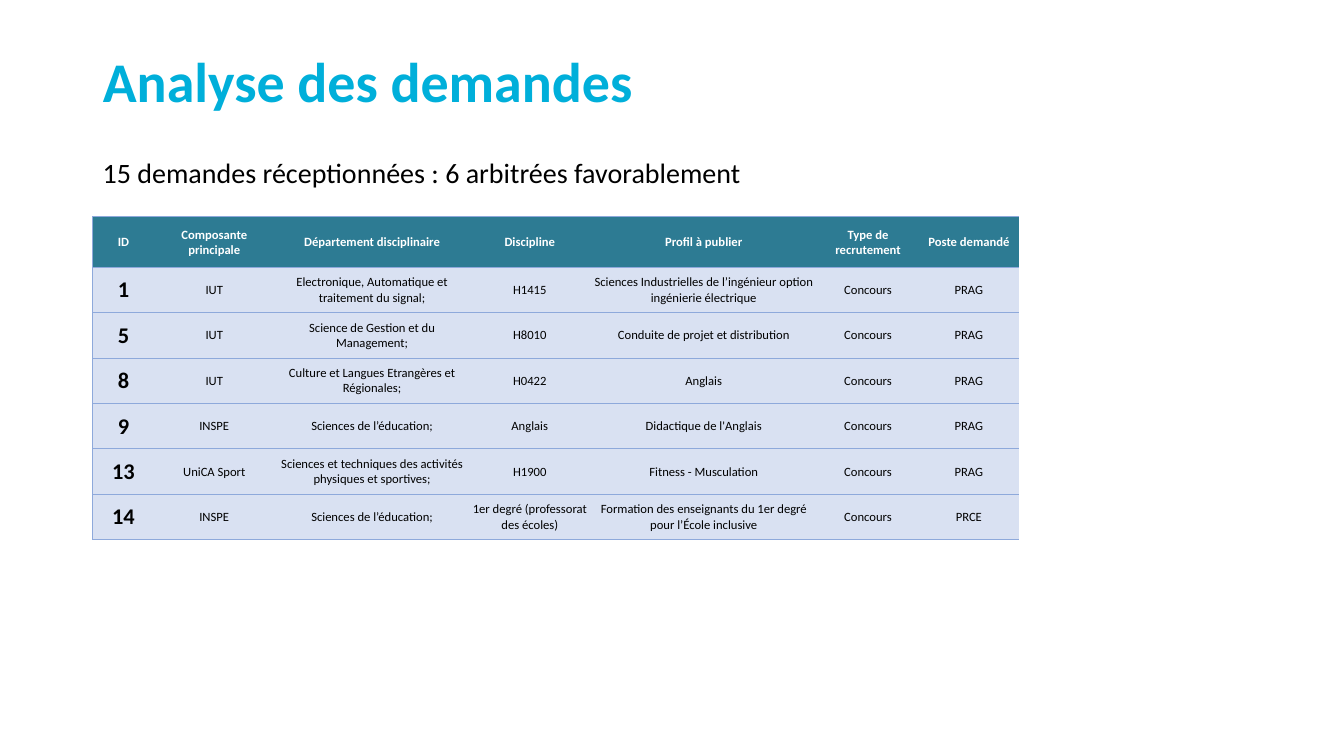
from dataclasses import dataclass

from lxml.etree import SubElement
from pptx import Presentation
from pptx.dml.color import RGBColor as RGB
from pptx.enum.text import MSO_ANCHOR as ANCHOR, PP_ALIGN as ALIGN
from pptx.oxml.ns import qn
from pptx.util import Pt

PX = 9144  # EMU per px, 100 px to the inch


@dataclass(frozen=True)
class Theme:
    font: str = "Calibri"
    title: str = "00AFDA"
    text: str = "000000"
    header_text: str = "FFFFFF"
    header_fill: str = "2D7B93"
    row_fill: str = "D9E1F2"
    border: str = "8EA9DB"
    title_size: int = 40
    body_size: int = 20
    id_size: int = 16
    cell_size: int = 9


THEME = Theme()

COLUMN_WIDTHS = [61, 119, 194, 119, 226, 100, 100]
HEADER_HEIGHT, ROW_HEIGHT = 50, 45
HEADER = ["ID", "Composante principale", "Département disciplinaire", "Discipline",
          "Profil à publier", "Type de recrutement", "Poste demandé"]
REQUESTS = [
    ["1", "IUT", "Electronique, Automatique et traitement du signal;", "H1415",
     "Sciences Industrielles de l’ingénieur option ingénierie électrique", "Concours", "PRAG"],
    ["5", "IUT", "Science de Gestion et du Management;", "H8010",
     "Conduite de projet et distribution", "Concours", "PRAG"],
    ["8", "IUT", "Culture et Langues Etrangères et Régionales;", "H0422",
     "Anglais", "Concours", "PRAG"],
    ["9", "INSPE", "Sciences de l’éducation;", "Anglais",
     "Didactique de l'Anglais", "Concours", "PRAG"],
    ["13", "UniCA Sport", "Sciences et techniques des activités physiques et sportives;", "H1900",
     "Fitness - Musculation", "Concours", "PRAG"],
    ["14", "INSPE", "Sciences de l’éducation;", "1er degré (professorat des écoles)",
     "Formation des enseignants du 1er degré pour l’École inclusive", "Concours", "PRCE"],
]


def write(tf, text, *, size, color, bold=False, align=ALIGN.LEFT, spacing=1.0):
    p = tf.paragraphs[0]
    p.alignment, p.line_spacing = align, spacing
    r = p.add_run()
    r.text = text
    r.font.name, r.font.size, r.font.bold = THEME.font, Pt(size), bold
    r.font.color.rgb = RGB.from_string(color)


def set_borders(cell, visible):
    """Draw the sides named in visible (from L, R, T, B) and blank the others."""
    tcPr = cell._tc.get_or_add_tcPr()
    for side in "LRTB":
        ln = SubElement(tcPr, qn(f"a:ln{side}"), w=str(Pt(0.5)))
        if side in visible:
            fill = SubElement(ln, qn("a:solidFill"))
            SubElement(fill, qn("a:srgbClr"), val=THEME.border)
        else:
            SubElement(ln, qn("a:noFill"))


class SlideBuilder:
    def __init__(self, prs, theme):
        self.theme = theme
        self.slide = prs.slides.add_slide(prs.slide_layouts[5])

    def title(self, text, x, y, w, h):
        sp = self.slide.shapes.title
        sp.left, sp.top, sp.width, sp.height = (v * PX for v in (x, y, w, h))
        tf = sp.text_frame
        tf.vertical_anchor, tf.word_wrap = ANCHOR.MIDDLE, True
        write(tf, text, size=self.theme.title_size, color=self.theme.title,
              bold=True, spacing=0.9)

    def body(self, text, x, y, w, h):
        sp = self.slide.shapes.add_textbox(*(v * PX for v in (x, y, w, h)))
        sp.text_frame.word_wrap = True
        write(sp.text_frame, text, size=self.theme.body_size,
              color=self.theme.text, spacing=0.9)

    def table(self, rows, widths, heights, x, y):
        frame = self.slide.shapes.add_table(
            len(rows), len(widths), x * PX, y * PX, sum(widths) * PX, sum(heights) * PX)
        table = frame.table
        table.horz_banding = False
        for column, width in zip(table.columns, widths):
            column.width = width * PX
        for i, (row, height) in enumerate(zip(rows, heights)):
            table.rows[i].height = height * PX
            for j, text in enumerate(row):
                self.cell(table.cell(i, j), text, is_header=i == 0, is_first=j == 0)

    def cell(self, cell, text, is_header, is_first):
        t = self.theme
        cell.margin_left = cell.margin_right = cell.margin_top = PX
        cell.margin_bottom = 0
        cell.vertical_anchor = ANCHOR.MIDDLE
        set_borders(cell, "LTB" if is_first else "TB")
        cell.fill.solid()
        cell.fill.fore_color.rgb = RGB.from_string(t.header_fill if is_header else t.row_fill)
        write(cell.text_frame, text, align=ALIGN.CENTER, bold=is_header or is_first,
              size=t.id_size if is_first and not is_header else t.cell_size,
              color=t.header_text if is_header else t.text)


def main():
    prs = Presentation()
    prs.slide_width, prs.slide_height = 1333 * PX, 750 * PX
    builder = SlideBuilder(prs, THEME)
    builder.title("Analyse des demandes", 92, 40, 1150, 88)
    builder.body("15 demandes réceptionnées : 6 arbitrées favorablement", 92, 153, 952, 476)
    heights = [HEADER_HEIGHT] + [ROW_HEIGHT] * len(REQUESTS)
    builder.table([HEADER] + REQUESTS, COLUMN_WIDTHS, heights, 92, 215)
    prs.save("out.pptx")


if __name__ == "__main__":
    main()
